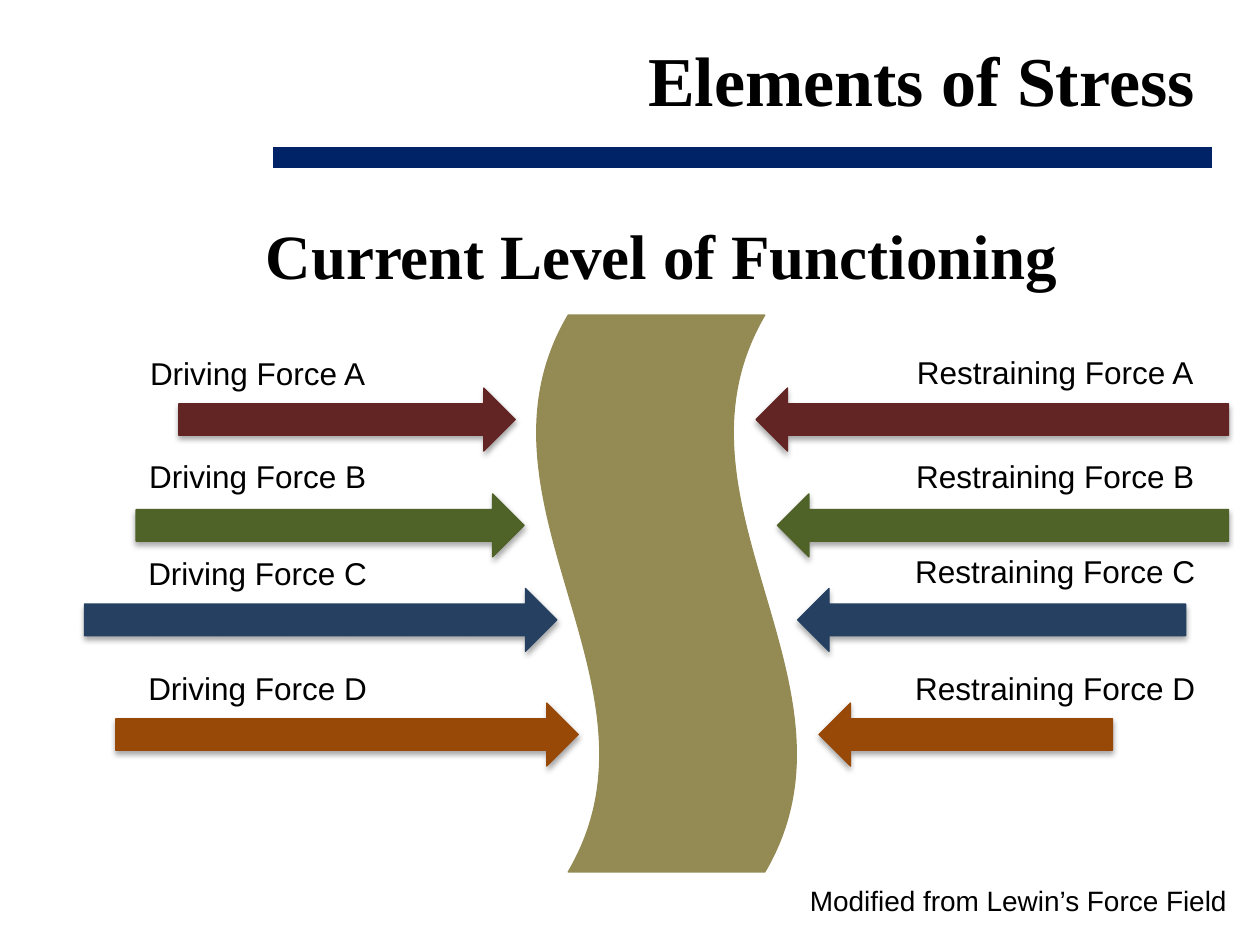
"""Build a force-field slide: driving and restraining forces around a level of functioning."""
from lxml import etree
from pptx import Presentation
from pptx.dml.color import RGBColor
from pptx.enum.shapes import MSO_CONNECTOR, MSO_SHAPE
from pptx.enum.text import MSO_ANCHOR, PP_ALIGN
from pptx.oxml import parse_xml
from pptx.oxml.ns import qn
from pptx.util import Inches, Pt

LEFT, CENTER, RIGHT = PP_ALIGN.LEFT, PP_ALIGN.CENTER, PP_ALIGN.RIGHT
TOP, MIDDLE = MSO_ANCHOR.TOP, MSO_ANCHOR.MIDDLE
WAVE, STRAIGHT = MSO_SHAPE.WAVE, MSO_CONNECTOR.STRAIGHT
RIGHT_ARROW, LEFT_ARROW = MSO_SHAPE.RIGHT_ARROW, MSO_SHAPE.LEFT_ARROW

TITLE = "Elements of Stress"
HEADING = "Current Level of Functioning"
CREDIT = "Modified from Lewin’s Force Field"

ROWS = [("A", 3.08), ("B", 3.92), ("C", 4.67), ("D", 5.58)]
SIDES = [
    {"name": "Driving Force", "arrow": RIGHT_ARROW, "label_left": 0.67,
     "label_tops": [2.76, 3.58, 4.35, 5.26],
     "spans": [(1.42, 2.67), (1.08, 3.08), (0.67, 3.75), (0.92, 3.67)]},
    {"name": "Restraining Force", "arrow": LEFT_ARROW, "label_left": 7,
     "label_tops": [2.75, 3.58, 4.33, 5.26],
     "spans": [(6, 3.75), (6.17, 3.58), (6.33, 3.08), (6.5, 2.33)]},
]
ARROW_HEIGHT = 0.5
LABEL_SIZE = (2.75, 0.4)

THEME = {
    "serif": "Times New Roman", "sans": "Arial",
    "title": 40, "heading": 36, "label": 18, "credit": 16,
    "text": "000000", "rule": "002368", "wave": "948A54",
    "forces": ["632523", "4F6228", "254061", "984807"],
    "rule_width": 12.25, "outline": 0.75,
}
SHADOW = (
    '<a:effectLst xmlns:a="http://schemas.openxmlformats.org/drawingml/2006/main">'
    '<a:outerShdw blurRad="40000" dist="23000" dir="5400000" rotWithShape="0">'
    '<a:srgbClr val="000000"><a:alpha val="35000"/></a:srgbClr>'
    '</a:outerShdw></a:effectLst>'
)


def add_text(slide, words, box, size, font, align=CENTER, anchor=TOP, bold=False):
    frame = slide.shapes.add_textbox(*map(Inches, box)).text_frame
    frame.word_wrap = True
    frame.vertical_anchor = anchor
    paragraph = frame.paragraphs[0]
    paragraph.alignment = align
    run = paragraph.add_run()
    run.text = words
    run.font.name = THEME[font]
    run.font.size = Pt(THEME[size])
    run.font.bold = bold
    run.font.color.rgb = RGBColor.from_string(THEME["text"])


def add_solid(slide, kind, box, color):
    solid = slide.shapes.add_shape(kind, *map(Inches, box))
    solid.fill.solid()
    solid.fill.fore_color.rgb = RGBColor.from_string(color)
    solid.line.color.rgb = RGBColor.from_string(color)
    solid.line.width = Pt(THEME["outline"])
    return solid


def add_rule(slide):
    rule = slide.shapes.add_connector(STRAIGHT, *map(Inches, (2.17, 1.25, 9.62, 1.25)))
    rule.line.color.rgb = RGBColor.from_string(THEME["rule"])
    rule.line.width = Pt(THEME["rule_width"])
    etree.SubElement(rule.element.spPr, qn("a:effectLst"))


def add_wave(slide):
    wave = add_solid(slide, WAVE, (3.08, 3.67, 4.42, 2.08), THEME["wave"])
    wave.shadow.inherit = False
    wave.rotation = 90
    wave.element.spPr.xfrm.set("flipV", "1")


def add_forces(slide, side):
    forces = zip(ROWS, side["spans"], side["label_tops"], THEME["forces"])
    for (letter, top), (left, width), label_top, color in forces:
        arrow = add_solid(slide, side["arrow"], (left, top, width, ARROW_HEIGHT), color)
        arrow.element.spPr.append(parse_xml(SHADOW))
        add_text(slide, f"{side['name']} {letter}",
                 (side["label_left"], label_top, *LABEL_SIZE), "label", "sans")


def main():
    deck = Presentation()
    deck.slide_width, deck.slide_height = Inches(10), Inches(7.5)
    slide = deck.slides.add_slide(deck.slide_layouts[6])
    add_rule(slide)
    add_wave(slide)
    for side in SIDES:
        add_forces(slide, side)
    add_text(slide, HEADING, (0.25, 1.67, 10, 0.71), "heading", "serif", bold=True)
    add_text(slide, CREDIT, (6.33, 6.96, 3.67, 0.37), "credit", "sans", LEFT)
    add_text(slide, TITLE, (0.58, 0, 9, 1.25), "title", "serif", RIGHT, MIDDLE, True)
    deck.save("out.pptx")


if __name__ == "__main__":
    main()
